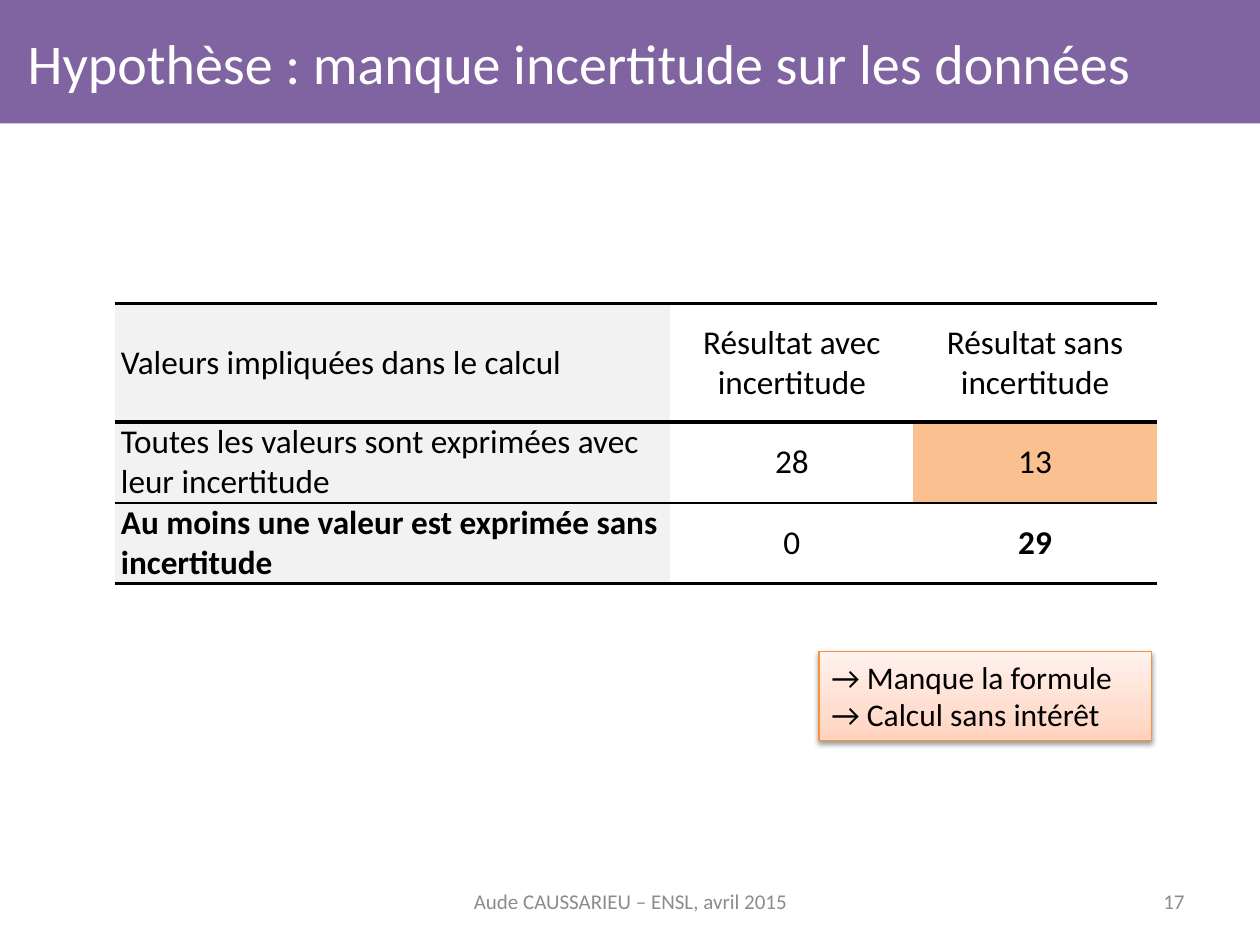
import pptx
import pptx.dml.color
import pptx.enum.shapes
import pptx.enum.text
import pptx.oxml
import pptx.oxml.ns
import pptx.util

Inches = pptx.util.Inches
Pt = pptx.util.Pt
ALIGN = pptx.enum.text.PP_ALIGN
MIDDLE = pptx.enum.text.MSO_ANCHOR.MIDDLE
RECTANGLE = pptx.enum.shapes.MSO_SHAPE.RECTANGLE
NAMESPACE = pptx.oxml.ns.nsdecls("a")

COLORS = {
    "band": "8064A2", "white": "FFFFFF", "black": "000000", "label": "F2F2F2",
    "highlight": "FAC090", "footer": "8C8C8C", "note_line": "F69240",
}
NOTE_STOPS = [(0, "FFD2BD"), (35, "FFDED0"), (100, "FFF2ED")]
HEADER = ["Valeurs impliquées dans le calcul", "Résultat avec incertitude", "Résultat sans incertitude"]
ROWS = [
    HEADER,
    ["Toutes les valeurs sont exprimées avec leur incertitude", "28", "13"],
    ["Au moins une valeur est exprimée sans incertitude", "0", "29"],
]
BOLD_CELLS = {(2, 0), (2, 2)}
COLUMN_WIDTHS = [4.41, 1.93, 1.93]
ROW_HEIGHTS = [0.94, 0.64, 0.64]
RULE_WIDTHS = [2, 2.25, 1, 2]


def color(name):
    return pptx.dml.color.RGBColor.from_string(COLORS[name])


def apply_format(target, values):
    for name, value in values.items():
        setattr(target, name, value)


def write_text(frame, lines, size, color_name, alignment=ALIGN.LEFT, bold=False):
    frame.text = "\n".join(lines)
    frame.word_wrap = True
    for paragraph in frame.paragraphs:
        paragraph.alignment = alignment
        apply_format(paragraph.font, {"name": "Calibri", "size": Pt(size), "bold": bold})
        paragraph.font.color.rgb = color(color_name)


def add_title(slide, band_box, title_box, text):
    band = slide.shapes.add_shape(RECTANGLE, *map(Inches, band_box))
    band.shadow.inherit = False
    band.fill.solid()
    band.fill.fore_color.rgb = color("band")
    band.line.fill.background()
    title = slide.shapes.title
    title.element.addprevious(band.element)
    apply_format(title, dict(zip(("left", "top", "width", "height"), map(Inches, title_box))))
    write_text(title.text_frame, [text], 32, "white")
    title.text_frame.vertical_anchor = MIDDLE


def set_borders(cell, top, bottom):
    properties = cell._tc.get_or_add_tcPr()
    for index, (side, width) in enumerate([("L", 0), ("R", 0), ("T", top), ("B", bottom)]):
        paint = f'<a:solidFill><a:srgbClr val="{COLORS["black"]}"/></a:solidFill>' if width else "<a:noFill/>"
        border = pptx.oxml.parse_xml(f'<a:ln{side} {NAMESPACE} w="{int(Pt(width))}">{paint}</a:ln{side}>')
        properties.insert(index, border)


def add_results_table(slide, box):
    table = slide.shapes.add_table(len(ROWS), len(HEADER), *map(Inches, box)).table
    apply_format(table, {"first_row": False, "horz_banding": False})
    for column, width in zip(table.columns, COLUMN_WIDTHS):
        column.width = Inches(width)
    for row_index, texts in enumerate(ROWS):
        table.rows[row_index].height = Inches(ROW_HEIGHTS[row_index])
        for column_index, text in enumerate(texts):
            position = (row_index, column_index)
            cell = table.cell(*position)
            apply_format(cell, {
                "margin_left": Inches(0.05), "margin_right": Inches(0.05),
                "margin_top": 0, "margin_bottom": 0, "vertical_anchor": MIDDLE,
            })
            alignment = ALIGN.CENTER if column_index else ALIGN.LEFT
            write_text(cell.text_frame, [text], 19, "black", alignment, position in BOLD_CELLS)
            fill_name = "white" if column_index else "label"
            cell.fill.solid()
            cell.fill.fore_color.rgb = color("highlight" if position == (1, 2) else fill_name)
            set_borders(cell, RULE_WIDTHS[row_index], RULE_WIDTHS[row_index + 1])


def add_note(slide, box, lines):
    note = slide.shapes.add_shape(RECTANGLE, *map(Inches, box))
    note.shadow.inherit = False
    note.line.color.rgb = color("note_line")
    note.line.width = Pt(0.75)
    note.fill.gradient()
    note.fill.gradient_angle = 90
    properties = note.element.spPr
    stops = properties.find(".//" + pptx.oxml.ns.qn("a:gsLst"))
    stops.clear()
    for position, value in NOTE_STOPS:
        stops.append(pptx.oxml.parse_xml(
            f'<a:gs {NAMESPACE} pos="{position * 1000}"><a:srgbClr val="{value}"/></a:gs>'))
    properties.find(pptx.oxml.ns.qn("a:effectLst")).append(pptx.oxml.parse_xml(
        f'<a:outerShdw {NAMESPACE} blurRad="{int(Pt(3.1))}" dist="{int(Pt(1.6))}" dir="5400000" rotWithShape="0">'
        f'<a:srgbClr val="{COLORS["black"]}"><a:alpha val="38000"/></a:srgbClr></a:outerShdw>'))
    write_text(note.text_frame, lines, 18, "black")
    note.text_frame.vertical_anchor = pptx.enum.text.MSO_ANCHOR.TOP


def add_footer(slide, box, text, alignment):
    frame = slide.shapes.add_textbox(*map(Inches, box)).text_frame
    write_text(frame, [text], 12, "footer", alignment)
    frame.vertical_anchor = MIDDLE


def main():
    presentation = pptx.Presentation()
    apply_format(presentation, {"slide_width": Inches(10), "slide_height": Inches(7.5)})
    slide = presentation.slides.add_slide(presentation.slide_layouts[5])
    add_title(slide, (-0.08, -0.34, 10.12, 1.32), (0.12, 0, 9.76, 0.99),
              "Hypothèse : manque incertitude sur les données")
    add_results_table(slide, (0.91, 2.41, sum(COLUMN_WIDTHS), sum(ROW_HEIGHTS)))
    add_footer(slide, (3.42, 6.95, 3.17, 0.4), "Aude CAUSSARIEU – ENSL, avril 2015", ALIGN.CENTER)
    add_footer(slide, (7.17, 6.95, 2.33, 0.4), "17", ALIGN.RIGHT)
    add_note(slide, (6.5, 5.17, 2.64, 0.71), ["→ Manque la formule", "→ Calcul sans intérêt"])
    presentation.save("out.pptx")


if __name__ == "__main__":
    main()
